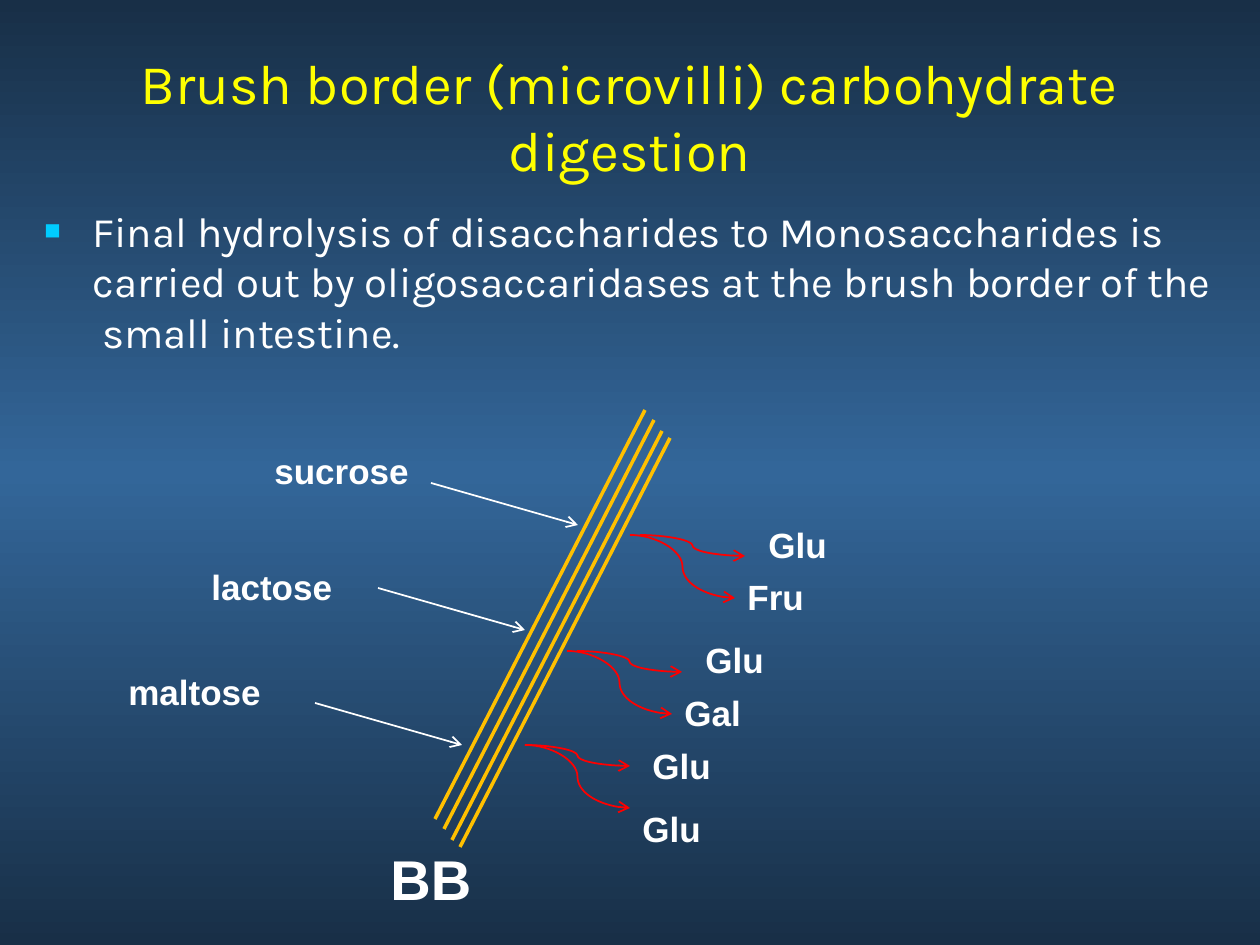
from copy import deepcopy

from lxml.etree import SubElement
from pptx import Presentation
from pptx.dml.color import RGBColor
from pptx.enum.shapes import MSO_CONNECTOR as LINK
from pptx.enum.text import MSO_ANCHOR as ANCHOR, PP_ALIGN as ALIGN
from pptx.oxml.ns import qn
from pptx.util import Emu, Pt

SCALE = 914400 / 126
WHITE, YELLOW, GOLD, RED, CYAN = "FFFFFF", "FFFF00", "FFC000", "FF0000", "00CCFF"
BACKGROUND = [(0, "182F47"), (0.5, "336699"), (1, "182F47")]

TITLE = "Brush border (microvilli) carbohydrate digestion"
BODY = ("Final hydrolysis of disaccharides to Monosaccharides is carried out by "
        "oligosaccaridases at the brush border of the  small intestine.")

MEMBRANE_TOPS = [(645, 410), (654, 420), (662, 431), (670, 438)]
MEMBRANE_RUN = (-210, 409)
SUGAR_RUN = (147, 42)
SHORT_RUN, LONG_RUN = (105, 21), (105, 63)

SUGARS = [
    {"name": "sucrose", "label": (262, 451), "arrow": (431, 483),
     "site": (630, 535), "shift": 10,
     "products": [("Glu", 756, 525), ("Fru", 735, 577)]},
    {"name": "lactose", "label": (199, 567), "arrow": (378, 588),
     "site": (567, 651), "shift": 10,
     "products": [("Glu", 693, 640), ("Gal", 672, 693)]},
    {"name": "maltose", "label": (116, 672), "arrow": (315, 703),
     "site": (525, 745), "shift": 0,
     "products": [("Glu", 640, 746), ("Glu", 630, 809)]},
]


def px(value):
    """Turn pixels into EMU."""
    return Emu(round(value * SCALE))


def color(value):
    """Turn a hex string into a colour."""
    return RGBColor.from_string(value)


def paint_background(page):
    """Fill the page with the vertical three-stop gradient."""
    fill = page.background.fill
    fill.gradient()
    fill.gradient_angle = 270
    stop_list = page.element.find(".//" + qn("a:gsLst"))
    stop_list.append(deepcopy(stop_list[0]))
    for stop, (position, tone) in zip(fill.gradient_stops, BACKGROUND):
        stop.position = position
        stop.color.rgb = color(tone)


def add_text(page, text, frame, size, font="Arial", tone=WHITE, bold=False):
    """Add a wrapping text box and return its frame."""
    box = page.shapes.add_textbox(*map(px, frame))
    text_frame = box.text_frame
    text_frame.word_wrap = True
    text_frame.text = text
    span = text_frame.paragraphs[0].runs[0]
    span.font.name = font
    span.font.size = Pt(size)
    span.font.bold = bold
    span.font.color.rgb = color(tone)
    return text_frame


def add_label(page, text, left, top, width, height=47, size=20):
    """Add a bold, tightly spaced diagram label."""
    text_frame = add_text(page, text, (left, top, width, height), size, bold=True)
    text_frame.paragraphs[0].line_spacing = 0.8


def add_bullet(para):
    """Give the paragraph a hanging square bullet."""
    props = para._p.get_or_add_pPr()
    props.set("marL", str(px(48)))
    props.set("indent", str(px(-48)))
    tint = SubElement(props, qn("a:buClr"))
    SubElement(tint, qn("a:srgbClr"), val=CYAN)
    SubElement(props, qn("a:buSzPct"), val="65000")
    SubElement(props, qn("a:buFont"), typeface="Arial")
    SubElement(props, qn("a:buChar"), char="■")


def add_line(page, start, run, tone, width=1, kind=LINK.STRAIGHT, arrow=True):
    """Draw a connector from start along run."""
    (x, y), (dx, dy) = start, run
    link = page.shapes.add_connector(kind, px(x), px(y), px(x + dx), px(y + dy))
    link.line.color.rgb = color(tone)
    link.line.width = Pt(width)
    if arrow:
        SubElement(link.line._get_or_add_ln(), qn("a:tailEnd"), type="arrow")
    SubElement(link._element.spPr, qn("a:effectLst"))


def main():
    """Build and save the slide."""
    deck = Presentation()
    deck.slide_width, deck.slide_height = px(1260), px(945)
    page = deck.slides.add_slide(deck.slide_layouts[6])
    paint_background(page)

    title = add_text(page, TITLE, (63, 53, 1134, 126), 32, "Karla", YELLOW)
    title.vertical_anchor = ANCHOR.MIDDLE
    title.paragraphs[0].alignment = ALIGN.CENTER
    body = add_text(page, BODY, (32, 199, 1197, 168), 24, "Karla")
    add_bullet(body.paragraphs[0])

    for top in MEMBRANE_TOPS:
        add_line(page, top, MEMBRANE_RUN, GOLD, width=2, arrow=False)
    add_label(page, "BB", 378, 851, 116, 67, 32)

    for sugar in SUGARS:
        add_label(page, sugar["name"], *sugar["label"], 179)
        add_line(page, sugar["arrow"], SUGAR_RUN, WHITE)
        x, y = sugar["site"]
        add_line(page, (x, y), LONG_RUN, RED, kind=LINK.CURVE)
        add_line(page, (x + sugar["shift"], y), SHORT_RUN, RED, kind=LINK.CURVE)
        for product, left, top in sugar["products"]:
            add_label(page, product, left, top, 84)

    deck.save("out.pptx")


if __name__ == "__main__":
    main()
